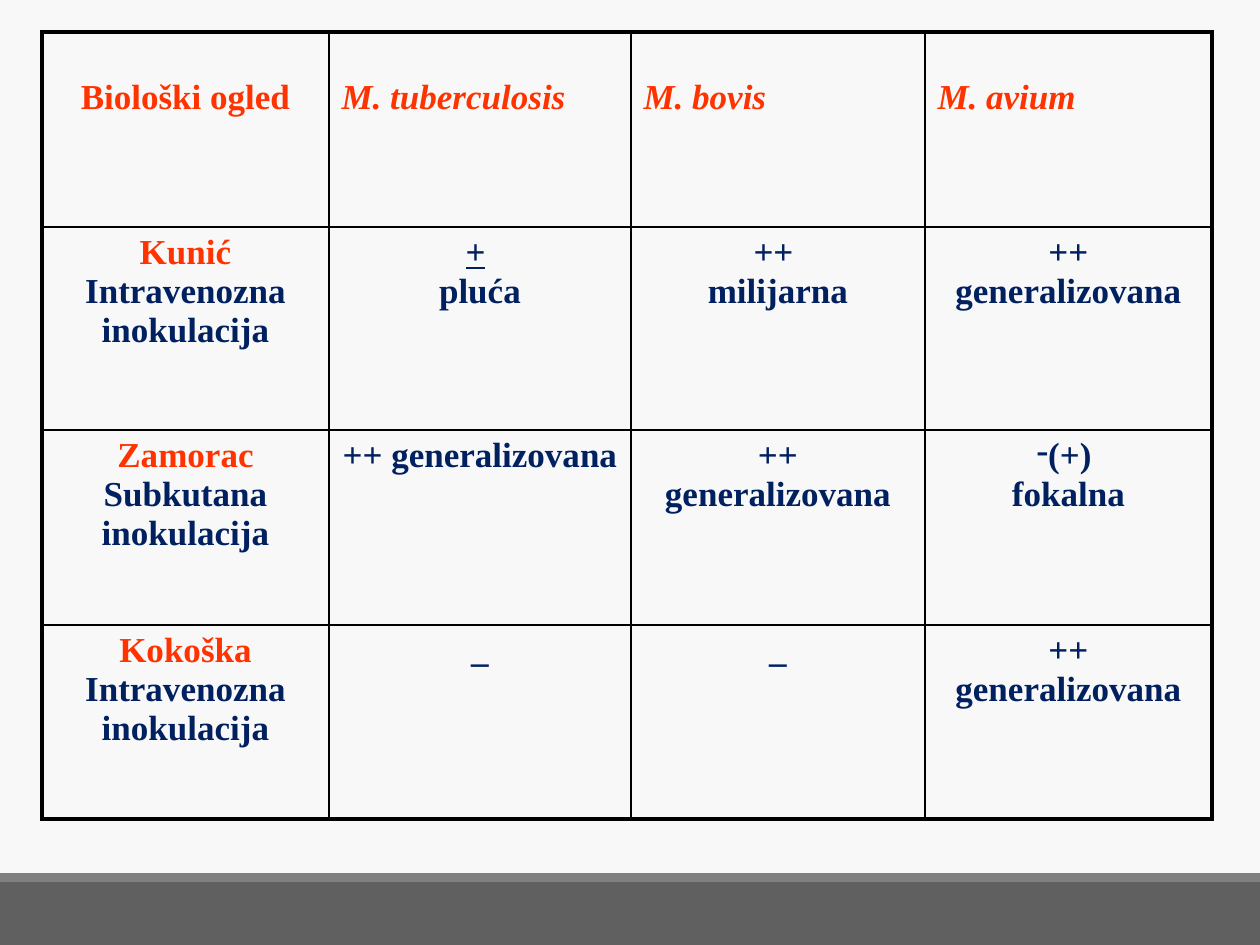
from dataclasses import dataclass

from lxml.etree import SubElement
from pptx import Presentation
from pptx.dml.color import RGBColor
from pptx.enum.shapes import MSO_SHAPE
from pptx.enum.text import PP_ALIGN
from pptx.oxml.ns import qn
from pptx.util import Emu, Pt


@dataclass(frozen=True)
class Theme:
    page: str = "F8F8F8"
    footer: str = "606060"
    strip: str = "808080"
    accent: str = "FF3300"
    body: str = "002060"
    border: str = "000000"
    font: str = "Times New Roman"
    size: float = 20
    outer: float = 2.25
    inner: float = 1


THEME = Theme()
COLUMNS = [287, 302, 294, 287]
ROWS = [195, 203, 195, 194]
HEADERS = ["Biološki ogled", "M. tuberculosis", "M. bovis", "M. avium"]
TRIALS = [
    ("Kunić", "Intravenozna inokulacija",
     [["+ ", "pluća"], ["++ ", "milijarna"], ["++ generalizovana"]]),
    ("Zamorac", "Subkutana inokulacija",
     [["++ generalizovana"], ["++ generalizovana"], ["(+) ", "fokalna"]]),
    ("Kokoška", "Intravenozna inokulacija",
     [["_"], ["_"], ["++ generalizovana"]]),
]


def px(length):
    return Emu(round(length * 914400 / 126))


def add_span(para, text, color, italic=False, underline=False):
    span = para.add_run()
    span.text = text
    font = span.font
    font.name = THEME.font
    font.size = Pt(THEME.size)
    font.bold = True
    font.italic = italic
    font.underline = underline
    font.color.rgb = RGBColor.from_string(color)


def add_dash_bullet(para):
    properties = para._p.get_or_add_pPr()
    properties.set("marL", "0")
    properties.set("indent", "0")
    SubElement(properties, qn("a:buFontTx"))
    SubElement(properties, qn("a:buChar"), char="-")


def add_para(cell, first):
    frame = cell.text_frame
    para = frame.paragraphs[0] if first else frame.add_paragraph()
    para.alignment = PP_ALIGN.CENTER
    return para


def set_borders(cell, row, column):
    edges = {
        "a:lnL": column == 0,
        "a:lnR": column == len(COLUMNS) - 1,
        "a:lnT": row == 0,
        "a:lnB": row == len(ROWS) - 1,
    }
    properties = cell._tc.get_or_add_tcPr()
    for tag, is_outer in edges.items():
        width = Pt(THEME.outer if is_outer else THEME.inner)
        line = SubElement(properties, qn(tag), w=str(width))
        fill = SubElement(line, qn("a:solidFill"))
        SubElement(fill, qn("a:srgbClr"), val=THEME.border)


def fill_header(cell, text, is_label):
    cell.margin_top = px(46)
    para = add_para(cell, True)
    if not is_label:
        para.alignment = PP_ALIGN.LEFT
    add_span(para, text, THEME.accent, italic=not is_label)


def fill_label(cell, animal, method):
    add_span(add_para(cell, True), animal, THEME.accent)
    add_span(add_para(cell, False), method, THEME.body)


def fill_result(cell, lines):
    for index, text in enumerate(lines):
        para = add_para(cell, index == 0)
        if text == "(+) ":
            add_dash_bullet(para)
        if text == "+ ":
            add_span(para, "+", THEME.body, underline=True)
            add_span(para, " ", THEME.body)
        else:
            add_span(para, text, THEME.body)


def add_trial_table(page, left, top):
    frame = page.shapes.add_table(len(ROWS), len(COLUMNS), px(left), px(top),
                                  px(sum(COLUMNS)), px(sum(ROWS)))
    table = frame.table
    table.horz_banding = False
    for column, width in zip(table.columns, COLUMNS):
        column.width = px(width)
    for row, height in zip(table.rows, ROWS):
        row.height = px(height)
    for row in range(len(ROWS)):
        for column in range(len(COLUMNS)):
            cell = table.cell(row, column)
            set_borders(cell, row, column)
            cell.fill.background()
    for column, text in enumerate(HEADERS):
        fill_header(table.cell(0, column), text, column == 0)
    for row, (animal, method, results) in enumerate(TRIALS, 1):
        fill_label(table.cell(row, 0), animal, method)
        for column, lines in enumerate(results, 1):
            fill_result(table.cell(row, column), lines)


def add_footer(page, left, top, width, height):
    strip_height = 9
    bars = [
        (top + strip_height, height - strip_height, THEME.footer),
        (top, strip_height, THEME.strip),
    ]
    for bar_top, bar_height, color in bars:
        bar = page.shapes.add_shape(MSO_SHAPE.RECTANGLE, px(left), px(bar_top),
                                    px(width), px(bar_height))
        bar.shadow.inherit = False
        bar.fill.solid()
        bar.fill.fore_color.rgb = RGBColor.from_string(color)
        bar.line.fill.background()


def main():
    deck = Presentation()
    deck.slide_width = px(1260)
    deck.slide_height = px(945)
    page = deck.slides.add_slide(deck.slide_layouts[6])
    page.background.fill.solid()
    page.background.fill.fore_color.rgb = RGBColor.from_string(THEME.page)
    add_footer(page, 0, 873, 1260, 72)
    add_trial_table(page, 42, 32)
    deck.save("out.pptx")


if __name__ == "__main__":
    main()
